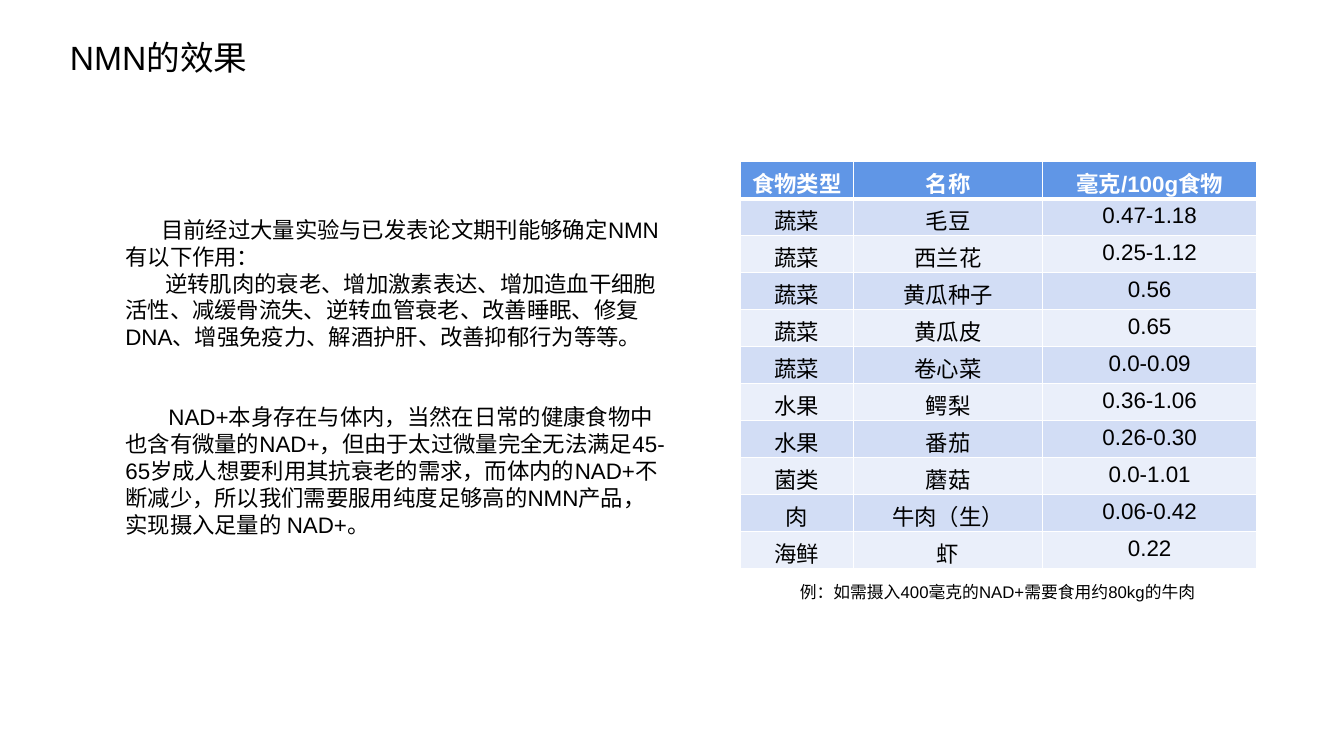
from lxml.etree import SubElement
from pptx import Presentation
from pptx.dml.color import RGBColor
from pptx.enum.text import MSO_ANCHOR, MSO_AUTO_SIZE, PP_ALIGN
from pptx.oxml.ns import qn
from pptx.util import Pt

EMU_PER_PX = 9525
WHITE, BLACK = "FFFFFF", "000000"
HEADER_FILL, BANDS = "6096E6", ("D2DDF5", "EAEFFA")

EFFECTS = [
    ("目前经过⼤量实验与已发表论文期刊能够确定NMN有以下作用：", 34, 0),
    ("逆转肌肉的衰老、增加激素表达、增加造血干细胞活性、减缓骨流失、逆转血管衰老、"
     "改善睡眠、修复DNA、增强免疫力、解酒护肝、改善抑郁行为等等。", 38, 0),
    ("NAD+本身存在与体内，当然在日常的健康食物中也含有微量的NAD+，但由于太过微量"
     "完全无法满足45-65岁成⼈想要利用其抗衰老的需求，而体内的NAD+不断减少，"
     "所以我们需要服用纯度⾜够高的NMN产品，实现摄入足量的 NAD+。", 41, 38),
]
FOODS = [
    ("食物类型", "名称", "毫克/100g食物"),
    ("蔬菜", "毛豆", "0.47-1.18"),
    ("蔬菜", "西兰花", "0.25-1.12"),
    ("蔬菜", "黄瓜种子", "0.56"),
    ("蔬菜", "黄瓜皮", "0.65"),
    ("蔬菜", "卷心菜", "0.0-0.09"),
    ("水果", "鳄梨", "0.36-1.06"),
    ("水果", "番茄", "0.26-0.30"),
    ("菌类", "蘑菇", "0.0-1.01"),
    ("肉", "牛肉（生）", "0.06-0.42"),
    ("海鲜", "虾", "0.22"),
]


def px(n):
    return n * EMU_PER_PX


def rgb(value):
    return RGBColor.from_string(value)


class Deck:
    font = "Arial"

    def __init__(self, width, height):
        self.prs = Presentation()
        self.prs.slide_width, self.prs.slide_height = px(width), px(height)
        self.slide = self.prs.slides.add_slide(self.prs.slide_layouts[5])

    def style(self, p, size, color=BLACK, align=PP_ALIGN.LEFT, bold=False):
        p.alignment = align
        p.font.name, p.font.size, p.font.bold = self.font, Pt(size), bold
        p.font.color.rgb = rgb(color)

    def title(self, text, x, y, w, h, size):
        sp = self.slide.shapes.title
        sp.left, sp.top, sp.width, sp.height = map(px, (x, y, w, h))
        tf = sp.text_frame
        tf.text = text
        tf.auto_size = MSO_AUTO_SIZE.NONE
        tf.vertical_anchor = MSO_ANCHOR.TOP
        self.style(tf.paragraphs[0], size)

    def text(self, paragraphs, x, y, w, h, size, align=PP_ALIGN.LEFT):
        tf = self.slide.shapes.add_textbox(*map(px, (x, y, w, h))).text_frame
        tf.word_wrap = True
        tf.auto_size = MSO_AUTO_SIZE.SHAPE_TO_FIT_TEXT
        for i, (text, indent, gap) in enumerate(paragraphs):
            p = tf.add_paragraph() if i else tf.paragraphs[0]
            p.text = text
            p.space_before = Pt(gap)
            p._p.get_or_add_pPr().set("indent", str(px(indent)))
            self.style(p, size, align=align)

    def borders(self, cell, bottom):
        tcPr = cell._tc.get_or_add_tcPr()
        for side, width in (("L", 1), ("R", 1), ("T", 1), ("B", bottom)):
            ln = SubElement(tcPr, qn(f"a:ln{side}"), w=str(Pt(width)))
            fill = SubElement(ln, qn("a:solidFill"))
            SubElement(fill, qn("a:srgbClr"), val=WHITE)

    def table(self, rows, x, y, widths, row_height, size):
        frame = self.slide.shapes.add_table(
            len(rows), len(widths), px(x), px(y),
            px(sum(widths)), px(row_height * len(rows)))
        table = frame.table
        for column, width in zip(table.columns, widths):
            column.width = px(width)
        for i, row in enumerate(rows):
            table.rows[i].height = px(row_height)
            header = i == 0
            for j, text in enumerate(row):
                cell = table.cell(i, j)
                cell.text = text
                self.style(cell.text_frame.paragraphs[0], size,
                           WHITE if header else BLACK, PP_ALIGN.CENTER, header)
                self.borders(cell, 3 if header else 1)
                cell.fill.solid()
                cell.fill.fore_color.rgb = rgb(
                    HEADER_FILL if header else BANDS[(i - 1) % 2])


def main():
    deck = Deck(1280, 720)
    deck.title("NMN的效果", 57, 30, 540, 48, 24)
    deck.text(EFFECTS, 110, 201, 535, 320, 16)
    deck.table(FOODS, 705, 154, (108, 180, 204), 35, 16)
    deck.text([("例：如需摄入400毫克的NAD+需要食用约80kg的牛肉", 0, 0)],
              733, 549, 434, 29, 12, PP_ALIGN.CENTER)
    deck.prs.save("out.pptx")


if __name__ == "__main__":
    main()
